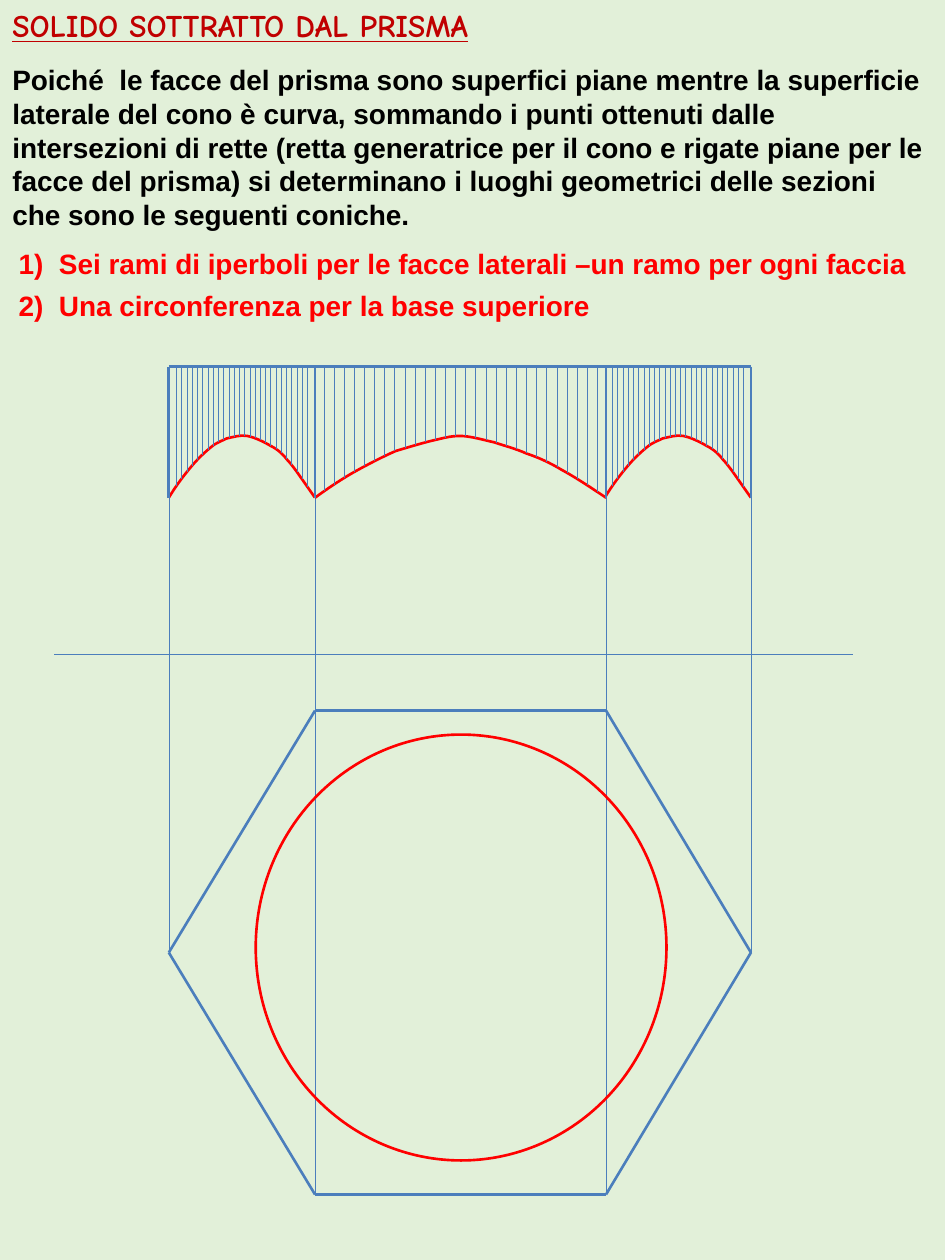
"""Build the slide on the solid removed from a hexagonal prism."""
from lxml.etree import SubElement
from pptx import Presentation
from pptx.dml.color import RGBColor
from pptx.enum.shapes import MSO_CONNECTOR, MSO_SHAPE
from pptx.enum.text import MSO_AUTO_SIZE
from pptx.oxml.ns import qn
from pptx.util import Inches, Pt

GREEN = RGBColor(0xE2, 0xF0, 0xD9)
BLUE = RGBColor(0x4B, 0x7E, 0xBC)
RED = RGBColor(0xFF, 0, 0)
DARK_RED = RGBColor(0xC0, 0, 0)
BLACK = RGBColor(0, 0, 0)
THICK, THIN = 1.5, 0.25

TITLE = "SOLIDO SOTTRATTO DAL PRISMA"
BODY = (
    "Poiché  le facce del prisma sono superfici piane mentre la superficie "
    "laterale del cono è curva, sommando i punti ottenuti dalle intersezioni "
    "di rette (retta generatrice per il cono e rigate piane per le facce del "
    "prisma) si determinano i luoghi geometrici delle sezioni che sono le "
    "seguenti coniche."
)
CONICS = [
    "1)\tSei rami di iperboli per le facce laterali –un ramo per ogni faccia",
    "2)\tUna circonferenza per la base superiore",
]

LEFT, MID_LEFT, MID_RIGHT, RIGHT = EDGES = 1.34, 2.5, 4.81, 5.96
TOP, FOOT, GROUND = 2.91, 3.95, 5.19
HEX_TOP, HEX_MIDDLE, HEX_BOTTOM = 5.64, 7.56, 9.48
HEXAGON = [
    (MID_LEFT, HEX_TOP), (MID_RIGHT, HEX_TOP), (RIGHT, HEX_MIDDLE),
    (MID_RIGHT, HEX_BOTTOM), (MID_LEFT, HEX_BOTTOM), (LEFT, HEX_MIDDLE),
]
PROJECTION_ENDS = [HEX_MIDDLE, HEX_BOTTOM, HEX_BOTTOM, HEX_MIDDLE]

SIDE_BRANCH = [
    (1.34, 3.95), (1.4, 3.85), (1.47, 3.76), (1.53, 3.69),
    (1.59, 3.62), (1.66, 3.56), (1.7, 3.53),
    (1.75, 3.5), (1.76, 3.5), (1.8, 3.48),
    (1.85, 3.47), (1.91, 3.45), (1.96, 3.46),
    (2.02, 3.47), (2.1, 3.51), (2.15, 3.54),
    (2.21, 3.57), (2.25, 3.61), (2.28, 3.65),
    (2.31, 3.68), (2.36, 3.75), (2.36, 3.75),
    (2.5, 3.95),
]
FRONT_BRANCH = [
    (2.5, 3.95), (2.61, 3.87), (2.73, 3.79), (2.84, 3.73),
    (2.95, 3.67), (3.05, 3.62), (3.14, 3.58),
    (3.24, 3.55), (3.34, 3.52), (3.42, 3.5),
    (3.51, 3.48), (3.57, 3.46), (3.65, 3.46),
    (3.73, 3.46), (3.83, 3.49), (3.92, 3.51),
    (4.01, 3.54), (4.09, 3.56), (4.18, 3.6),
    (4.27, 3.63), (4.36, 3.67), (4.46, 3.73),
    (4.57, 3.79), (4.69, 3.87), (4.81, 3.95),
]
FAR_BRANCH = [(x + RIGHT - MID_LEFT, y) for x, y in SIDE_BRANCH]
FACES = [
    (SIDE_BRANCH, 1.4, 2.44, 26),
    (FRONT_BRANCH, 2.57, 4.74, 28),
    (FAR_BRANCH, 4.86, 5.9, 26),
]


def add_line(shapes, start, end, width):
    c = shapes.add_connector(
        MSO_CONNECTOR.STRAIGHT, *(Inches(v) for v in (*start, *end)))
    c.line.color.rgb = BLUE
    c.line.width = Pt(width)
    SubElement(c._element.spPr, qn("a:effectLst"))


def outline(sp):
    sp.shadow.inherit = False
    sp.fill.background()
    sp.line.color.rgb = RED
    sp.line.width = Pt(THICK)


def bezier(a, b, c, d, t):
    u = 1 - t
    return tuple(
        u**3 * p + 3 * u * u * t * q + 3 * u * t * t * v + t**3 * w
        for p, q, v, w in zip(a, b, c, d))


def height_at(branch, x, steps=8):
    points = [branch[0]]
    for i in range(0, len(branch) - 3, 3):
        points += [bezier(*branch[i:i + 4], n / steps)
                   for n in range(1, steps + 1)]
    points.append(branch[-1])
    for (x0, y0), (x1, y1) in zip(points, points[1:]):
        if x0 <= x <= x1 and x1 > x0:
            return y0 + (y1 - y0) * (x - x0) / (x1 - x0)
    return FOOT


def add_branch(shapes, branch):
    points = [(Inches(x), Inches(y)) for x, y in branch]
    fb = shapes.build_freeform(*points[0], scale=1.0)
    fb.add_line_segments(points[1:], close=False)
    sp = fb.convert_to_shape()
    segments = list(sp._element.iter(qn("a:lnTo")))
    for i in range(0, len(segments) - 2, 3):
        first, *others = segments[i:i + 3]
        first.tag = qn("a:cubicBezTo")
        for segment in others:
            first.append(segment[0])
            segment.getparent().remove(segment)
    outline(sp)


def add_hatch(shapes, branch, first, last, count):
    for i in range(count):
        x = first + (last - first) * i / (count - 1)
        add_line(shapes, (x, TOP), (x, height_at(branch, x)), THIN)


def add_text(s, box, text, size, font, color, underline=False, hang=0):
    tf = s.shapes.add_textbox(*(Inches(v) for v in box)).text_frame
    tf.word_wrap = True
    tf.auto_size = MSO_AUTO_SIZE.SHAPE_TO_FIT_TEXT
    p = tf.paragraphs[0]
    if hang:
        pPr = p._p.get_or_add_pPr()
        pPr.set("marL", str(Inches(hang)))
        pPr.set("indent", str(-Inches(hang)))
    r = p.add_run()
    r.text = text
    r.font.name = font
    r.font.size = Pt(size)
    r.font.bold = True
    r.font.color.rgb = color
    if underline:
        r.font.underline = True


def main():
    prs = Presentation()
    prs.slide_width, prs.slide_height = Inches(7.5), Inches(10)
    s = prs.slides.add_slide(prs.slide_layouts[6])
    s.background.fill.solid()
    s.background.fill.fore_color.rgb = GREEN

    plan = s.shapes.add_group_shape().shapes
    for start, end in zip(HEXAGON, HEXAGON[1:] + HEXAGON[:1]):
        add_line(plan, start, end, THICK)
    for x, bottom in zip(EDGES, PROJECTION_ENDS):
        add_line(s.shapes, (x, FOOT), (x, bottom), THIN)
    add_line(s.shapes, (0.43, GROUND), (6.77, GROUND), THIN)
    outline(s.shapes.add_shape(
        MSO_SHAPE.OVAL, Inches(2.03), Inches(5.83), Inches(3.26), Inches(3.38)))
    add_text(s, (0, 0, 7.5, 0.4), TITLE, 18, "Comic Neue", DARK_RED, True)

    elevation = s.shapes.add_group_shape().shapes
    add_line(elevation, (LEFT, TOP), (RIGHT, TOP), THICK)
    for branch, *_ in FACES:
        add_branch(elevation, branch)
    for x in EDGES:
        add_line(elevation, (x, TOP), (x, FOOT), THICK)
    for face in FACES:
        add_hatch(elevation, *face)

    add_text(s, (0, 0.45, 7.5, 1.45), BODY, 16, "Arial", BLACK)
    for i, text in enumerate(CONICS):
        add_text(s, (0.05, 1.91 + 0.33 * i, 7.4, 0.37), text, 16, "Arial",
                 RED, hang=0.32)
    prs.save("out.pptx")


if __name__ == "__main__":
    main()
